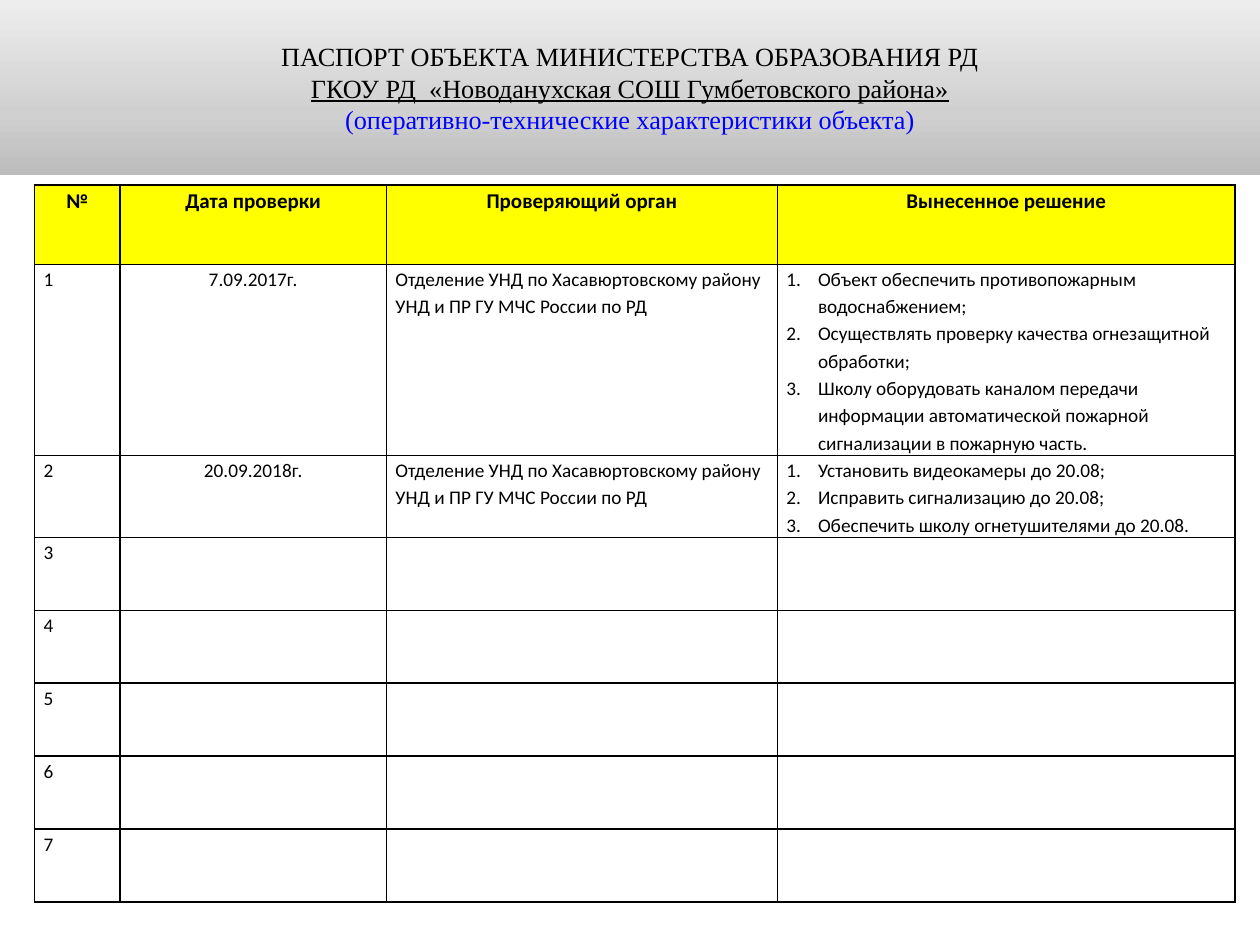
from copy import deepcopy
from dataclasses import dataclass

from lxml import etree
from pptx import Presentation
from pptx.dml.color import RGBColor
from pptx.enum.shapes import MSO_SHAPE
from pptx.enum.text import MSO_ANCHOR, PP_ALIGN
from pptx.oxml.ns import qn
from pptx.util import Cm, Pt

RECT = MSO_SHAPE.RECTANGLE
MIDDLE = MSO_ANCHOR.MIDDLE
CENTER, LEFT = PP_ALIGN.CENTER, PP_ALIGN.LEFT


@dataclass(frozen=True)
class Theme:
    serif: str = "Times New Roman"
    sans: str = "Calibri"
    black: str = "000000"
    blue: str = "0000FF"
    yellow: str = "FFFF00"
    grays: tuple = ((0, "BCBCBC"), (35, "D0D0D0"), (100, "EDEDED"))
    title: float = 15
    head: float = 12
    body: float = 11
    border: float = 1


THEME = Theme()

# text, colour, underline
TITLE = [
    ("ПАСПОРТ ОБЪЕКТА МИНИСТЕРСТВА ОБРАЗОВАНИЯ РД", THEME.black, False),
    ("ГКОУ РД  «Новоданухская СОШ Гумбетовского района»", THEME.black, True),
    ("(оперативно-технические характеристики объекта)", THEME.blue, False),
]
HEAD = ["№", "Дата проверки", "Проверяющий орган", "Вынесенное решение"]
AGENCY = "Отделение УНД по Хасавюртовскому району УНД и ПР ГУ МЧС России по РД"
CHECKS = [
    ("7.09.2017г.", AGENCY, [
        "Объект обеспечить противопожарным водоснабжением;",
        "Осуществлять проверку качества огнезащитной обработки;",
        "Школу оборудовать каналом передачи информации автоматической "
        "пожарной сигнализации в пожарную часть.",
    ]),
    ("20.09.2018г.", AGENCY, [
        "Установить видеокамеры до 20.08;",
        "Исправить сигнализацию до 20.08;",
        "Обеспечить школу огнетушителями до 20.08.",
    ]),
]
COUNT = 7
WIDTHS = [1.72, 5.37, 7.88, 9.23]
HEIGHTS = [1.6, 1.8] + [1.47] * (COUNT - 1)
DATE = 1


def color(code):
    return RGBColor.from_string(code)


def style(para, face, size, code, bold=False):
    font = para.font
    font.name, font.size, font.bold = face, Pt(size), bold
    font.color.rgb = color(code)


def shade(shape):
    """Fill the shape with the gray gradient, darkest at the bottom."""
    fill = shape.fill
    fill.gradient()
    fill.gradient_angle = 90
    first = shape._element.spPr.find(".//" + qn("a:gs"))
    first.addnext(deepcopy(first))
    for stop, (place, code) in zip(fill.gradient_stops, THEME.grays):
        stop.position = place / 100
        stop.color.rgb = color(code)


def add_title(slide, width):
    box = slide.shapes.add_shape(RECT, 0, 0, width, Cm(3.53))
    box.shadow.inherit = False
    box.line.fill.background()
    shade(box)
    frame = box.text_frame
    frame.word_wrap = True
    frame.vertical_anchor = MIDDLE
    for i, (text, code, under) in enumerate(TITLE):
        para = frame.add_paragraph() if i else frame.paragraphs[0]
        para.text = text
        para.alignment = CENTER
        style(para, THEME.serif, THEME.title, code)
        para.font.underline = under


def outline(cell):
    props = cell._tc.get_or_add_tcPr()
    for i, side in enumerate(("lnL", "lnR", "lnT", "lnB")):
        line = etree.Element(qn("a:" + side), w=str(Pt(THEME.border)))
        fill = etree.SubElement(line, qn("a:solidFill"))
        etree.SubElement(fill, qn("a:srgbClr"), val=THEME.black)
        props.insert(i, line)


def number(para):
    """Make the paragraph an item of a numbered list."""
    props = para._p.get_or_add_pPr()
    props.set("marL", str(Cm(0.64)))
    props.set("indent", str(-Cm(0.64)))
    etree.SubElement(props, qn("a:buFont"), typeface="+mj-lt")
    etree.SubElement(props, qn("a:buAutoNum"), type="arabicPeriod")


def fill_cell(cell, value, head, align):
    cell.margin_left = cell.margin_right = Cm(0.18)
    cell.margin_top = cell.margin_bottom = 0
    if head:
        cell.fill.solid()
        cell.fill.fore_color.rgb = color(THEME.yellow)
    else:
        cell.fill.background()
    outline(cell)
    items = value if isinstance(value, list) else [value]
    frame = cell.text_frame
    for i, text in enumerate(items):
        para = frame.add_paragraph() if i else frame.paragraphs[0]
        para.text = text
        para.alignment = align
        para.line_spacing = 1.15
        size = THEME.head if head else THEME.body
        style(para, THEME.sans, size, THEME.black, head)
        if items is value:
            number(para)


def add_grid(slide):
    blank = [("", "", "")] * (COUNT - len(CHECKS))
    rows = [HEAD] + [(str(i), *row) for i, row in enumerate(CHECKS + blank, 1)]
    grid = slide.shapes.add_table(
        len(rows), len(HEAD), Cm(0.7), Cm(3.73),
        Cm(sum(WIDTHS)), Cm(sum(HEIGHTS))).table
    grid.horz_banding = False
    for col, width in zip(grid.columns, WIDTHS):
        col.width = Cm(width)
    for r, (row, height) in enumerate(zip(rows, HEIGHTS)):
        grid.rows[r].height = Cm(height)
        for c, value in enumerate(row):
            align = CENTER if r == 0 or c == DATE else LEFT
            fill_cell(grid.cell(r, c), value, r == 0, align)


def main():
    deck = Presentation()
    deck.slide_width, deck.slide_height = Cm(25.4), Cm(19.05)
    slide = deck.slides.add_slide(deck.slide_layouts[6])
    add_title(slide, deck.slide_width)
    add_grid(slide)
    deck.save("out.pptx")


if __name__ == "__main__":
    main()
